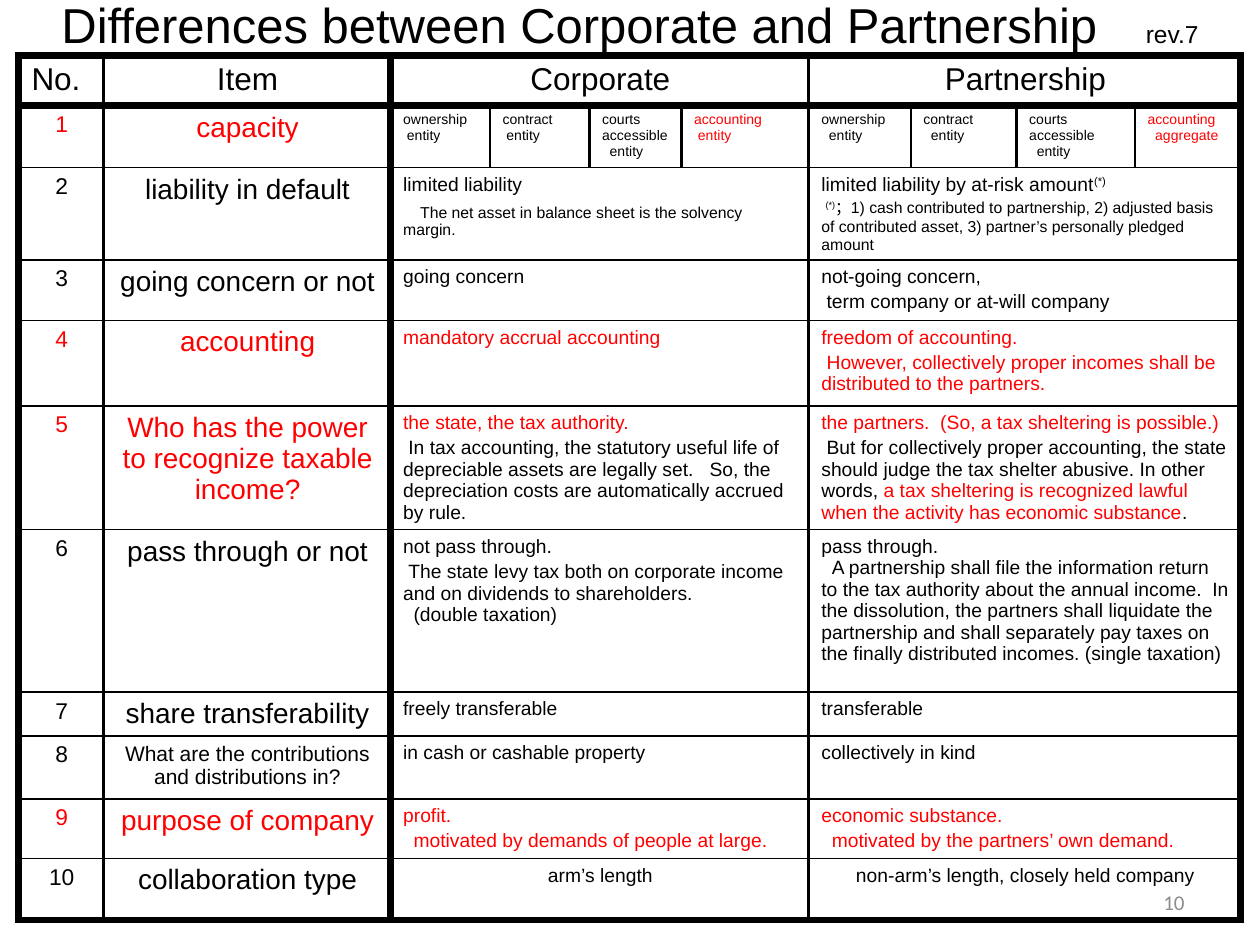
"""Build a one-slide table comparing corporate and partnership entities."""
from dataclasses import dataclass

from lxml.etree import SubElement
from pptx import Presentation
from pptx.dml.color import RGBColor
from pptx.enum.text import MSO_ANCHOR, MSO_AUTO_SIZE, PP_ALIGN
from pptx.oxml.ns import qn
from pptx.util import Inches, Pt


@dataclass(frozen=True)
class Theme:
    """Colours, fonts and type sizes of the slide."""
    black: str = "000000"
    red: str = "FF0000"
    grey: str = "8C8C8C"
    font: str = "Arial"
    number_font: str = "Calibri"
    title: float = 28
    revision: float = 14
    header: float = 18
    item: float = 16
    small_item: float = 12
    number: float = 13
    body: float = 11
    note: float = 9
    entity: float = 8
    thick: float = 4.5
    medium: float = 2.25
    thin: float = 1.5
    hairline: float = 1


THEME = Theme()
BLACK, RED = THEME.black, THEME.red


@dataclass(frozen=True)
class Line:
    """One paragraph: its text or spans, size, colour, indent in spaces and gap."""
    content: object
    size: float = THEME.body
    color: str = BLACK
    indent: int = 0
    gap: float = 0
    align: object = PP_ALIGN.LEFT


@dataclass(frozen=True)
class Span:
    """A stretch of text with its own colour or raised position."""
    text: str
    color: str = BLACK
    raised: bool = False


COLUMNS = [0.67, 2.28, 0.79, 0.79, 0.73, 1.01, 0.81, 0.84, 0.94, 0.84]
ROWS = [0.4, 0.49, 0.73, 0.48, 0.68, 0.98, 1.29, 0.34, 0.5, 0.47, 0.49]
GROUP_STARTS = (2, 6)
GROUP_SIZE = 4
COLUMN_EDGES = {0: THEME.thick, 1: THEME.medium, 2: THEME.thick,
                6: THEME.medium, 10: THEME.thick}
THICK_ROW_EDGES = (0, 1, len(ROWS))


def centered(text, size, color=BLACK):
    """Return a centred line."""
    return Line(text, size, color, align=PP_ALIGN.CENTER)


def follow(content, indent=1, color=BLACK, gap=0.2 * THEME.body):
    """Return an indented line that follows a cell's first line."""
    return Line(content, color=color, indent=indent, gap=gap)


def entity(words, indent, color=BLACK):
    """Return the lines of one entity cell, with the last word indented."""
    *first_words, last = words.split()
    lines = [Line(word, THEME.entity, color) for word in first_words]
    return lines + [Line(last, THEME.entity, color, indent)]


ENTITIES = [
    entity("ownership entity", 1), entity("contract entity", 1),
    entity("courts accessible entity", 2), entity("accounting entity", 1, RED),
    entity("ownership entity", 2), entity("contract entity", 2),
    entity("courts accessible entity", 2), entity("accounting aggregate", 2, RED),
]

COMPARISONS = [
    ("liability in default", BLACK,
     [Line("limited liability", gap=2),
      Line("The net asset in balance sheet is the solvency margin.",
           THEME.note, indent=4, gap=5)],
     [Line([Span("limited liability by at-risk amount"), Span("(*)", raised=True)]),
      Line([Span("(*)", raised=True),
            Span("；1) cash contributed to partnership, 2) adjusted basis of "
                 "contributed asset, 3) partner’s personally pledged amount")],
           THEME.note, indent=1)]),
    ("going concern or not", BLACK,
     [Line("going concern")],
     [Line("not-going concern,"), follow("term company or at-will company")]),
    ("accounting", RED,
     [Line("mandatory accrual accounting", color=RED)],
     [Line("freedom of accounting.", color=RED),
      follow("However, collectively proper incomes shall be distributed to "
             "the partners.", color=RED)]),
    ("Who has the power to recognize taxable income?", RED,
     [Line("the state, the tax authority.", color=RED),
      follow("In tax accounting, the statutory useful life of depreciable assets "
             "are legally set.   So, the depreciation costs are automatically "
             "accrued by rule.")],
     [Line("the partners.  (So, a tax sheltering is possible.)", color=RED),
      follow([Span("But for collectively proper accounting, the state should judge "
                   "the tax shelter abusive. In other words, "),
              Span("a tax sheltering is recognized lawful when the activity has "
                   "economic substance", RED),
              Span(".")])]),
    ("pass through or not", BLACK,
     [Line("not pass through."),
      follow("The state levy tax both on corporate income and on dividends to "
             "shareholders."),
      follow("(double taxation)", 2, gap=0)],
     [Line("pass through."),
      follow("A partnership shall file the information return to the tax authority "
             "about the annual income.  In the dissolution, the partners shall "
             "liquidate the partnership and shall separately pay taxes on the "
             "finally distributed incomes. (single taxation)", 2, gap=0)]),
    ("share transferability", BLACK,
     [Line("freely transferable")], [Line("transferable")]),
    ("What are the contributions and distributions in?", BLACK,
     [Line("in cash or cashable property")], [Line("collectively in kind")]),
    ("purpose of company", RED,
     [Line("profit.", color=RED),
      follow("motivated by demands of people at large.", 2, RED)],
     [Line("economic substance.", color=RED),
      follow("motivated by the partners’ own demand.", 2, RED)]),
    ("collaboration type", BLACK,
     [centered("arm’s length", THEME.body)],
     [centered("non-arm’s length, closely held company", THEME.body)]),
]


def style(font, size, color, name=THEME.font):
    """Set a font's name, size and colour."""
    font.name, font.size = name, Pt(size)
    font.color.rgb = RGBColor.from_string(color)


def write_lines(frame, lines):
    """Write lines as the paragraphs of a text frame."""
    for index, line in enumerate(lines):
        para = frame.add_paragraph() if index else frame.paragraphs[0]
        para.alignment, para.space_before = line.align, Pt(line.gap)
        style(para.font, line.size, line.color)
        if line.indent:
            width = Pt(line.indent * 0.27 * line.size)
            para._p.get_or_add_pPr().set("indent", str(int(width)))
        plain = isinstance(line.content, str)
        for part in [Span(line.content, line.color)] if plain else line.content:
            span = para.add_run()
            span.text = part.text
            style(span.font, line.size, part.color)
            if part.raised:
                span._r.get_or_add_rPr().set("baseline", "30000")


def row_edge(index):
    """Return the width of a horizontal rule."""
    return THEME.thick if index in THICK_ROW_EDGES else THEME.hairline


def draw_borders(cell, row, column, span):
    """Rule the four sides of a cell that covers span columns."""
    inner = THEME.thin if row == 1 else None
    widths = {"L": COLUMN_EDGES.get(column, inner),
              "R": COLUMN_EDGES.get(column + span, inner),
              "T": row_edge(row), "B": row_edge(row + 1)}
    properties = cell._tc.get_or_add_tcPr()
    for side, width in widths.items():
        if width:
            rule = SubElement(properties, qn(f"a:ln{side}"), w=str(int(Pt(width))))
            fill = SubElement(rule, qn("a:solidFill"))
            SubElement(fill, qn("a:srgbClr"), val=BLACK)


def table_rows():
    """Yield each row as a mapping from column to lines."""
    headings = [centered(text, THEME.header)
                for text in ("Item", "Corporate", "Partnership")]
    yield dict(zip((0, 1, 2, 6), [[Line("No.", THEME.header)]] + [[h] for h in headings]))
    yield dict(enumerate([[centered("1", THEME.number, RED)],
                          [centered("capacity", THEME.item, RED)], *ENTITIES]))
    for number, (item, color, corporate, partnership) in enumerate(COMPARISONS, 2):
        size = THEME.small_item if number == 8 else THEME.item
        yield {0: [centered(str(number), THEME.number, color)],
               1: [centered(item, size, color)], 2: corporate, 6: partnership}


def add_comparison(page):
    """Add the comparison table."""
    frame = page.shapes.add_table(len(ROWS), len(COLUMNS), Inches(0.15), Inches(0.44),
                                  Inches(sum(COLUMNS)), Inches(sum(ROWS)))
    table = frame.table
    table.first_row = table.horz_banding = False
    for column, width in zip(table.columns, COLUMNS):
        column.width = Inches(width)
    for row, height in zip(table.rows, ROWS):
        row.height = Inches(height)
    for row, contents in enumerate(table_rows()):
        for column in range(len(COLUMNS)):
            cell = table.cell(row, column)
            merged = row != 1 and column in GROUP_STARTS
            span = GROUP_SIZE if merged else 1
            if merged:
                cell.merge(table.cell(row, column + span - 1))
            draw_borders(cell, row, column, span)
            cell.fill.background()
            cell.margin_right = Inches(0.09)
            if column in contents:
                write_lines(cell.text_frame, contents[column])


def place(shape, deck, left, top, width, height):
    """Place a shape by shares of the slide and centre its text vertically."""
    shape.left, shape.width = (int(deck.slide_width * share) for share in (left, width))
    shape.top, shape.height = (int(deck.slide_height * share) for share in (top, height))
    frame = shape.text_frame
    frame.word_wrap, frame.auto_size = True, MSO_AUTO_SIZE.NONE
    frame.vertical_anchor = MSO_ANCHOR.MIDDLE
    return frame.paragraphs[0]


def add_title(deck, page):
    """Fill the title placeholder with the heading and revision."""
    para = place(page.shapes.title, deck, 0, 0, 1, 0.05)
    para.alignment = PP_ALIGN.CENTER
    for text, size in (("Differences between Corporate and Partnership　", THEME.title),
                       ("rev.7", THEME.revision)):
        span = para.add_run()
        span.text = text
        style(span.font, size, BLACK)


def add_page_number(deck, page):
    """Add the page number at the lower right."""
    para = place(page.shapes.add_textbox(0, 0, 0, 0), deck, 0.72, 0.93, 0.23, 0.05)
    para.text, para.alignment = "10", PP_ALIGN.RIGHT
    style(para.font, 12, THEME.grey, THEME.number_font)


def main():
    """Build and save the deck."""
    deck = Presentation()
    deck.slide_width, deck.slide_height = Inches(10), Inches(7.5)
    page = deck.slides.add_slide(deck.slide_layouts[5])
    add_title(deck, page)
    add_page_number(deck, page)
    add_comparison(page)
    deck.save("out.pptx")


if __name__ == "__main__":
    main()
